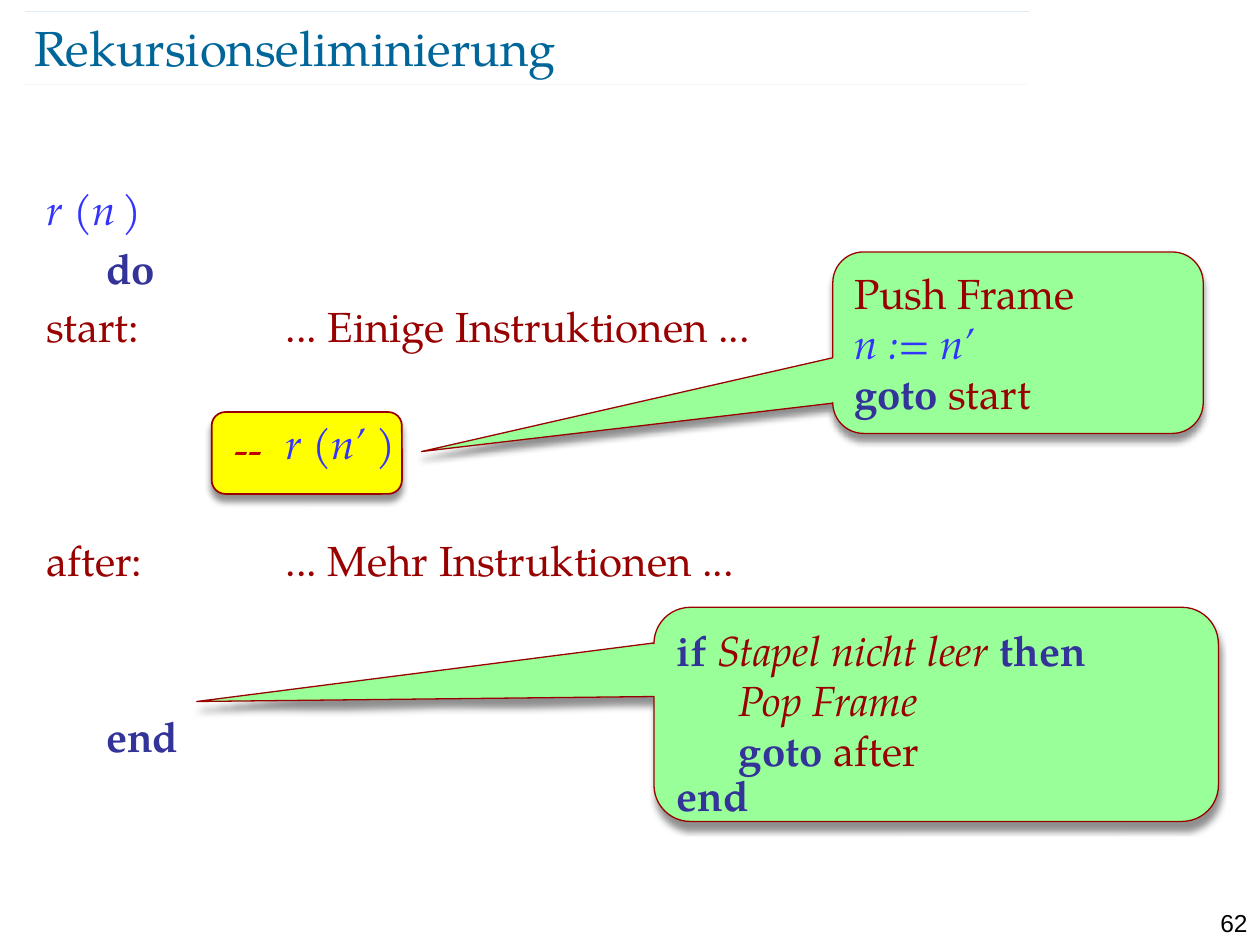
from lxml.etree import SubElement
from pptx import Presentation
from pptx.dml.color import RGBColor
from pptx.enum.shapes import MSO_CONNECTOR as Connector, MSO_SHAPE as Shape
from pptx.enum.text import MSO_ANCHOR as Anchor, PP_ALIGN as Align
from pptx.oxml.ns import qn
from pptx.util import Inches, Pt

# Grid: 100 columns by 75 rows of square cells
COLUMNS, ROWS = 100, 75
CELL = Inches(0.1)
LINE_HEIGHT, LINE_GAP = 29.1, 4.5  # points
BODY_TAB, CALLOUT_TAB = 4.75, 4.9  # columns
SERIF = "TeX Gyre Pagella"

COLORS = {
    "title": "006699", "text": "990000", "keyword": "333399", "variable": "3333FF",
    "dash": "C00000", "number": "000000", "marker": "FFFF00", "callout": "99FF99",
}
STYLES = {
    "title": {"size": Pt(28), "color": "title"},
    "number": {"size": Pt(14), "color": "number", "name": "Arial"},
    "dash": {"color": "dash"},
    "text": {"color": "text"},
    "remark": {"color": "text", "italic": True},
    "keyword": {"color": "keyword", "bold": True},
    "symbol": {"color": "variable"},
    "variable": {"color": "variable", "italic": True},
    "thin": {"color": "variable", "italic": True, "size": Pt(16)},
}

# Each line: number of free lines above it, then its runs
PROGRAM = [
    (0, [("r", "variable"), (" (", "symbol"), ("n", "variable"), (" ", "thin"), (")", "symbol")]),
    (0, [("\tdo", "keyword")]),
    (0, [("start:\t\t\t... Einige Instruktionen ...", "text")]),
    (1, [("\t\t\t\t", "symbol"), ("r", "variable"), (" (", "symbol"),
         ("n’ ", "variable"), (")", "symbol")]),
    (1, [("after:\t\t\t... Mehr Instruktionen ...", "text")]),
    (2, [("\tend", "keyword")]),
]
CALL = [
    [("Push Frame", "text")],
    [("n := n’", "variable")],
    [("goto ", "keyword"), ("start", "text")],
]
RETURN = [
    [("if ", "keyword"), ("Stapel nicht leer ", "remark"), ("then", "keyword")],
    [("\tPop Frame", "remark")],
    [("\tgoto ", "keyword"), ("after", "text")],
    [("end", "keyword")],
]


def rgb(name):
    return RGBColor.from_string(COLORS[name])


def cells(*values):
    return [round(value * CELL) for value in values]


def add_runs(paragraph, runs):
    for text, style in runs:
        run = paragraph.add_run()
        run.text = text
        for key, value in {"name": SERIF, "size": Pt(24), **STYLES[style]}.items():
            if key == "color":
                run.font.color.rgb = rgb(value)
            else:
                setattr(run.font, key, value)


def add_tabs(paragraph, step, count=4):
    tabs = SubElement(paragraph._p.get_or_add_pPr(), qn("a:tabLst"))
    for index in range(1, count + 1):
        SubElement(tabs, qn("a:tab"), pos=str(cells(index * step)[0]), algn="l")


def write_lines(frame, lines, tab=None):
    """Fill a text frame with lines of runs and return its paragraphs."""
    frame.word_wrap = True
    for index, runs in enumerate(lines):
        paragraph = frame.add_paragraph() if index else frame.paragraphs[0]
        paragraph.alignment = Align.LEFT
        if tab:
            add_tabs(paragraph, tab)
        add_runs(paragraph, runs)
    return frame.paragraphs


def add_text(slide, box, lines, tab=None):
    frame = slide.shapes.add_textbox(*cells(*box)).text_frame
    write_lines(frame, lines, tab)
    return frame


def add_panel(slide, kind, box, fill, line_width):
    """Add an outlined shape with a soft shadow below it."""
    shape = slide.shapes.add_shape(kind, *cells(*box))
    shape.shadow.inherit = False
    shape.fill.solid()
    shape.fill.fore_color.rgb = rgb(fill)
    shape.line.color.rgb = rgb("text")
    shape.line.width = Pt(line_width)
    effects = shape._element.spPr.find(qn("a:effectLst"))
    shadow = SubElement(effects, qn("a:outerShdw"), blurRad=str(Pt(4)), dist=str(Pt(4)),
                        dir="5400000", algn="t", rotWithShape="0")
    color = SubElement(shadow, qn("a:srgbClr"), val="000000")
    SubElement(color, qn("a:alpha"), val="43000")
    return shape


def add_rule(slide, left, top, width):
    rule = slide.shapes.add_connector(
        Connector.STRAIGHT, *cells(left, top, left + width, top))
    rule.line.color.rgb = rgb("title")
    rule.line.width = Pt(0.1)
    properties = rule._element.spPr
    color = next(properties.iter(qn("a:srgbClr")))
    SubElement(color, qn("a:alpha"), val="35000")
    SubElement(properties, qn("a:effectLst"))


def add_header(slide, box):
    left, top, width, height = box
    add_rule(slide, left, top + height, width)
    add_rule(slide, left + 0.2, top, width)
    frame = add_text(slide, (left + 0.9, top + 0.4, 86.9, 4.8),
                     [[("Rekursionseliminierung", "title")]])
    for side in ("left", "top", "right", "bottom"):
        setattr(frame, f"margin_{side}", 0)
    frame.vertical_anchor = Anchor.MIDDLE


def add_program(slide, box):
    frame = add_text(slide, box, [runs for _, runs in PROGRAM], BODY_TAB)
    for paragraph, (free, _) in list(zip(frame.paragraphs, PROGRAM))[1:]:
        paragraph.space_before = Pt(LINE_GAP + free * (LINE_HEIGHT + LINE_GAP))


def add_marker(slide, box):
    add_panel(slide, Shape.ROUNDED_RECTANGLE, box, "marker", 1)


def add_dashes(slide, box):
    left, top, width, height = box
    add_text(slide, (left + 0.8, top + 0.3, width * 0.35, height * 0.77), [[("--", "dash")]])


def add_callout(slide, box, tail, lines):
    """Add a callout whose tail ends at the given share of its size from the centre."""
    shape = add_panel(slide, Shape.ROUNDED_RECTANGULAR_CALLOUT, box, "callout", 0.75)
    for index, value in enumerate((*tail, 0.17)):
        shape.adjustments[index] = value
    shape.text_frame.vertical_anchor = Anchor.TOP
    return write_lines(shape.text_frame, lines, CALLOUT_TAB)


def add_number(slide, box):
    frame = add_text(slide, box, [[("62", "number")]])
    frame.paragraphs[0].alignment = Align.RIGHT


def main():
    presentation = Presentation()
    presentation.slide_width, presentation.slide_height = cells(COLUMNS, ROWS)
    slide = presentation.slides.add_slide(presentation.slide_layouts[6])
    marker_box = (16.8, 32.7, 15.1, 6.5)

    add_number(slide, (94.5, 71.6, 5.5, 2.4))
    add_marker(slide, marker_box)
    add_header(slide, (1.8, 0.9, 79.7, 5.8))
    add_program(slide, (2.7, 14.1, 94, 57.2))
    add_callout(slide, (66.1, 20, 29.4, 14.4), (-1.61, 0.6), CALL)
    lines = add_callout(slide, (51.9, 48.2, 44.8, 17), (-1.31, -0.06), RETURN)
    lines[-1].line_spacing = 0.9
    add_dashes(slide, marker_box)
    presentation.save("out.pptx")


if __name__ == "__main__":
    main()
